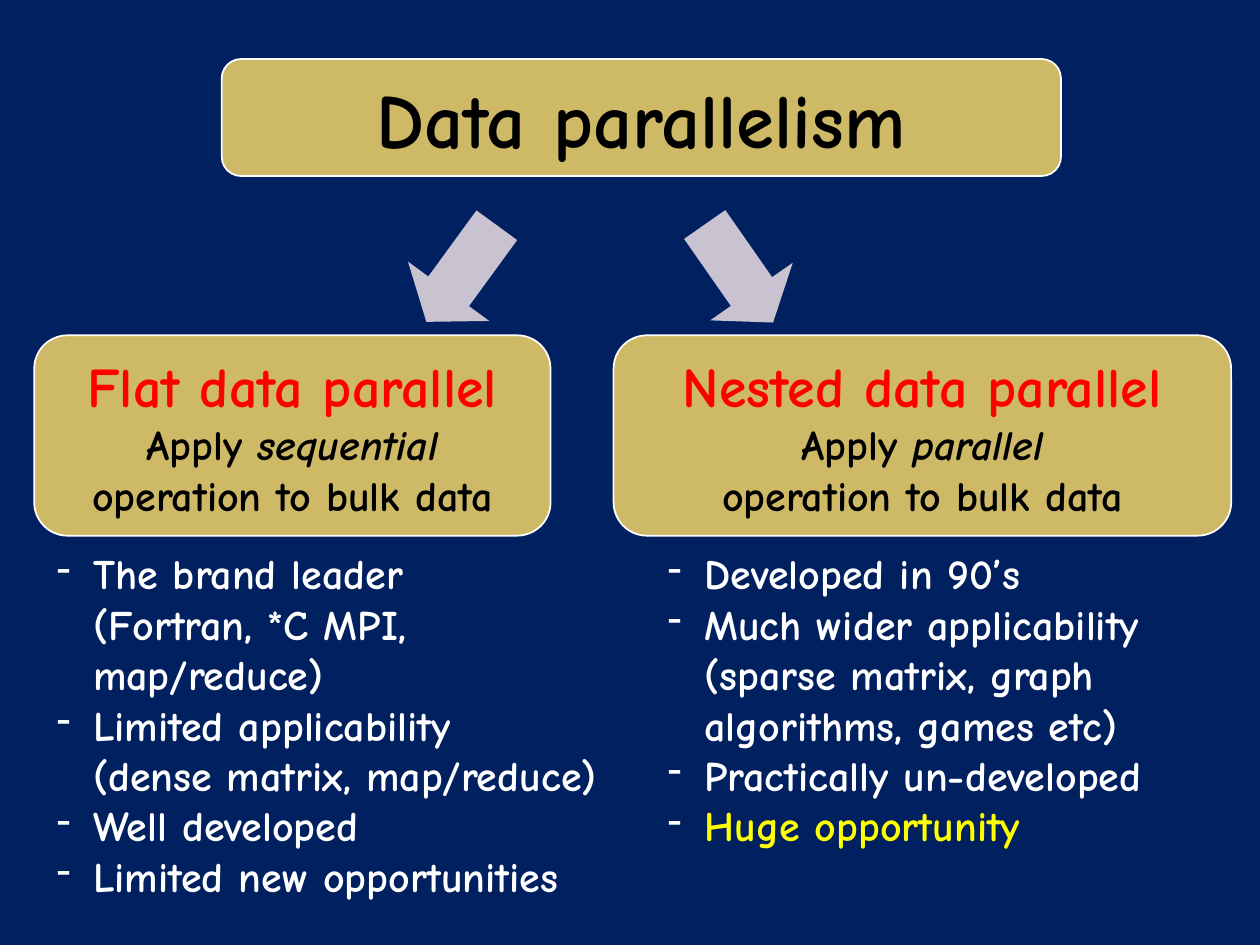
import pptx
import pptx.util
import pptx.dml.color
import pptx.enum.shapes
import pptx.enum.text
import pptx.oxml
import pptx.oxml.ns
import lxml.etree

Cm = pptx.util.Cm
RGBColor = pptx.dml.color.RGBColor
SHAPE = pptx.enum.shapes.MSO_SHAPE
ALIGN = pptx.enum.text.PP_ALIGN

NAVY = RGBColor(0x00, 0x20, 0x60)
GOLD = RGBColor(0xCE, 0xB9, 0x66)
LILAC = RGBColor(0xC9, 0xC2, 0xD1)
WHITE = RGBColor(0xFF, 0xFF, 0xFF)
BLACK = RGBColor(0x00, 0x00, 0x00)
RED = RGBColor(0xFF, 0x00, 0x00)
YELLOW = RGBColor(0xFF, 0xFF, 0x00)
FONT = "Comic Neue"


def add_text(p, text, size=24, color=BLACK, italic=False):
    for i, line in enumerate(text.split("\n")):
        if i:
            p.add_line_break()
        r = p.add_run()
        r.text = line
        r.font.name = FONT
        r.font.size = pptx.util.Pt(size)
        r.font.bold = True
        r.font.italic = italic
        r.font.color.rgb = color


def add_paragraph(tf, first, align):
    p = tf.paragraphs[0] if first else tf.add_paragraph()
    p.alignment = align
    return p


def add_panel(s, x, y, w, h, paragraphs):
    sp = s.shapes.add_shape(SHAPE.ROUNDED_RECTANGLE, Cm(x), Cm(y), Cm(w), Cm(h))
    sp.shadow.inherit = False
    sp.fill.solid()
    sp.fill.fore_color.rgb = GOLD
    sp.line.color.rgb = WHITE
    sp.line.width = pptx.util.Pt(1)
    tf = sp.text_frame
    tf.word_wrap = True
    tf.vertical_anchor = pptx.enum.text.MSO_ANCHOR.MIDDLE
    for i, runs in enumerate(paragraphs):
        p = add_paragraph(tf, i == 0, ALIGN.CENTER)
        for text, fmt in runs:
            add_text(p, text, **fmt)


def add_arrow(s, x, y, w, h, angle):
    sp = s.shapes.add_shape(SHAPE.RIGHT_ARROW, Cm(x), Cm(y), Cm(w), Cm(h))
    sp.shadow.inherit = False
    sp.adjustments[1] = 0.375
    sp.rotation = angle
    sp.fill.solid()
    sp.fill.fore_color.rgb = LILAC
    sp.line.fill.background()


def add_dash(p):
    pPr = p._p.get_or_add_pPr()
    pPr.set("marL", str(Cm(0.74)))
    pPr.set("indent", str(-Cm(0.74)))
    color = lxml.etree.SubElement(pPr, pptx.oxml.ns.qn("a:buClr"))
    lxml.etree.SubElement(color, pptx.oxml.ns.qn("a:srgbClr")).set("val", str(WHITE))
    lxml.etree.SubElement(pPr, pptx.oxml.ns.qn("a:buChar")).set("char", "-")


def add_list(s, x, y, w, h, items):
    tf = s.shapes.add_textbox(Cm(x), Cm(y), Cm(w), Cm(h)).text_frame
    tf.word_wrap = True
    for i, (text, color) in enumerate(items):
        p = add_paragraph(tf, i == 0, ALIGN.LEFT)
        add_dash(p)
        add_text(p, text, color=color)


def add_branch(s, x, y, w, h, title, kind, items, arrow_dx, angle, list_dx, list_h):
    add_arrow(s, x + arrow_dx, y - 2.26, 2.41, 2.03, angle)
    add_panel(s, x, y, w, h, [
        [(title, dict(size=32, color=RED))],
        [("Apply ", {}), (kind, dict(italic=True))],
        [("operation to bulk data", {})],
    ])
    add_list(s, x + list_dx, y + h + 0.12, 12.19, list_h, items)


def main():
    prs = pptx.Presentation()
    prs.slide_width, prs.slide_height = Cm(25.4), Cm(19.05)
    s = prs.slides.add_slide(prs.slide_layouts[6])
    s.background.fill.solid()
    s.background.fill.fore_color.rgb = NAVY

    add_panel(s, 4.47, 1.19, 16.92, 2.36, [[("Data parallelism", dict(size=44))]])
    add_branch(s, 0.69, 6.76, 10.41, 4.04, "Flat data parallel", "sequential", [
        ("The brand leader\n(Fortran, *C MPI,\nmap/reduce)", WHITE),
        ("Limited applicability\n(dense matrix, map/reduce)", WHITE),
        ("Well developed", WHITE),
        ("Limited new opportunities", WHITE),
    ], arrow_dx=7.41, angle=126.1, list_dx=0.2, list_h=7.44)
    add_branch(s, 12.37, 6.76, 12.45, 4.04, "Nested data parallel", "parallel", [
        ("Developed in 90’s", WHITE),
        ("Much wider applicability (sparse matrix, graph algorithms, games etc)", WHITE),
        ("Practically un-developed", WHITE),
        ("Huge opportunity", YELLOW),
    ], arrow_dx=1.32, angle=55.1, list_dx=0.84, list_h=6.4)
    prs.save("out.pptx")


if __name__ == "__main__":
    main()
